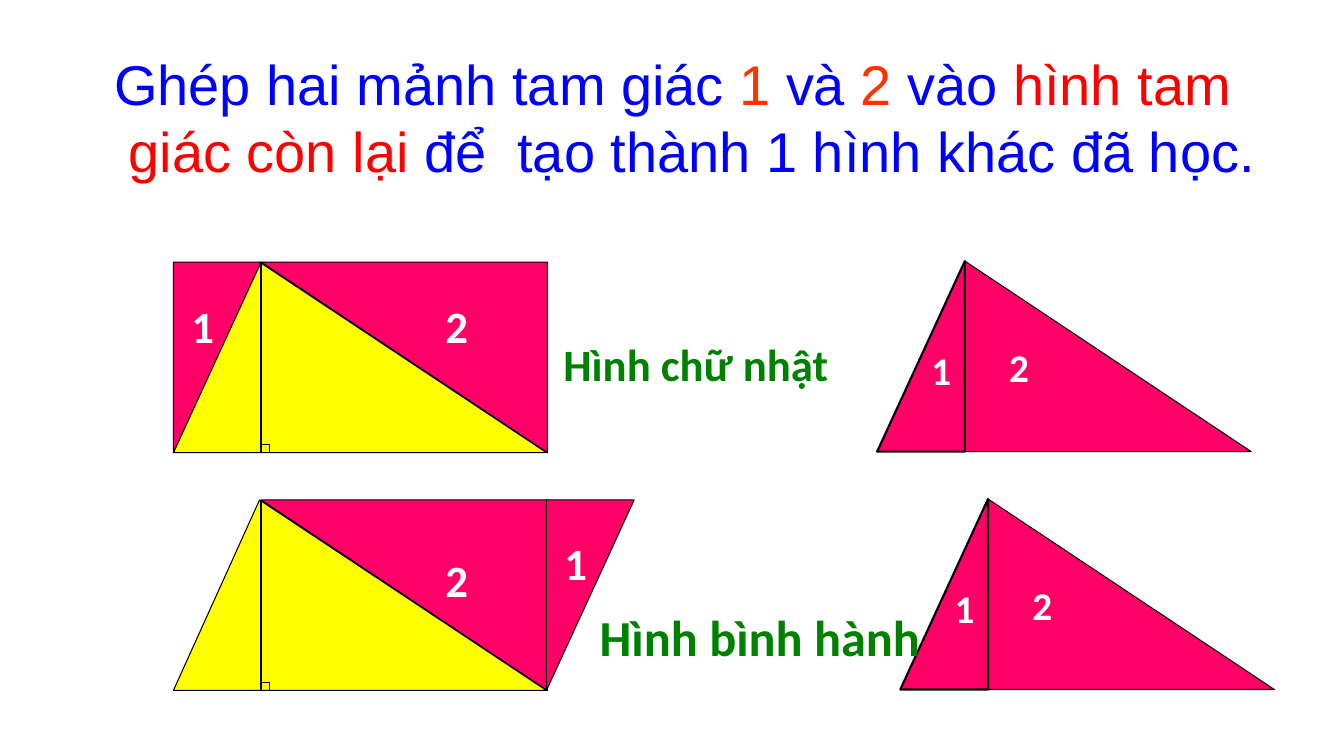
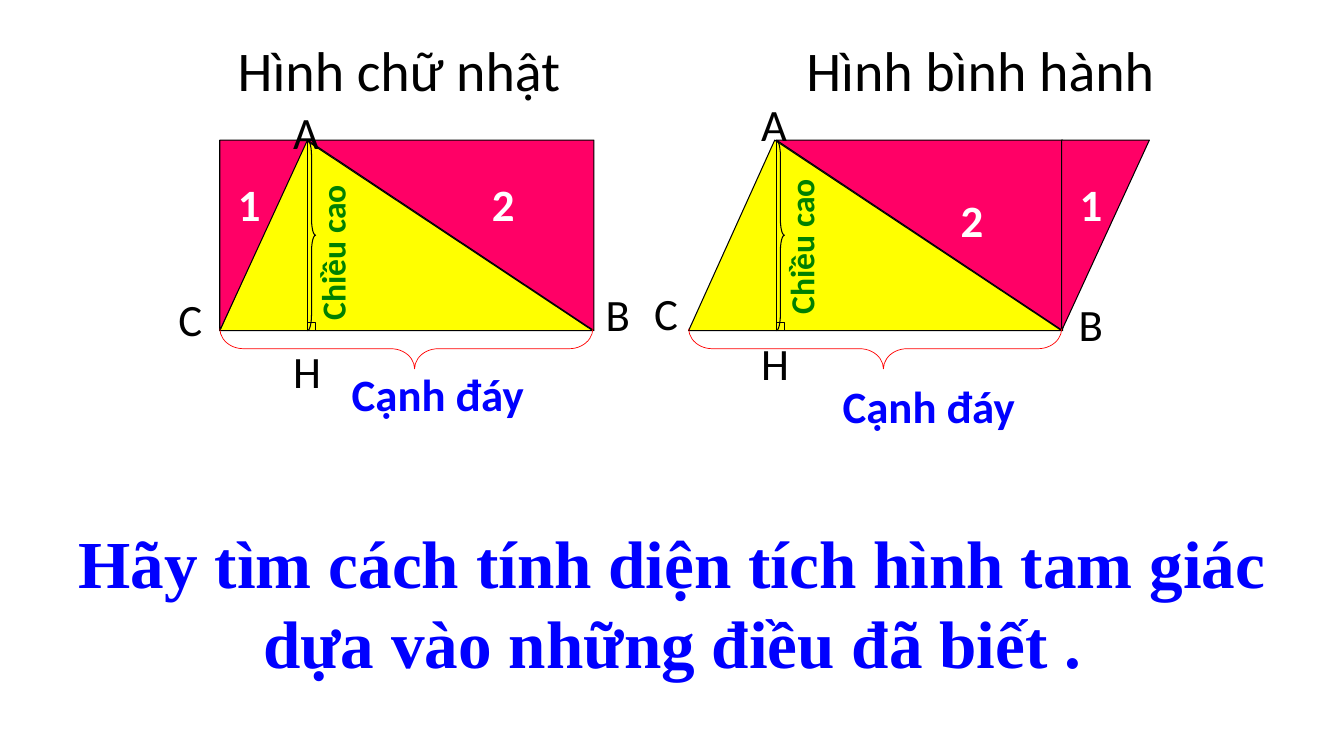
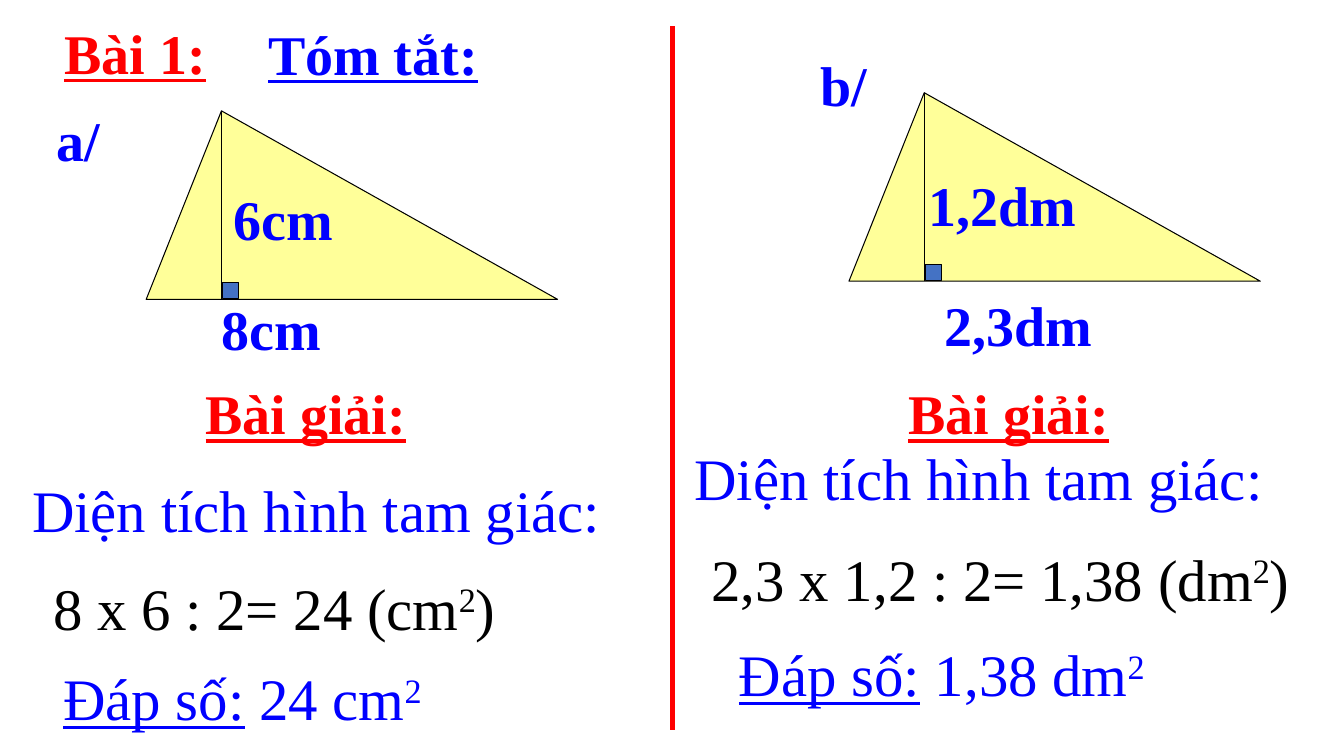
from pptx import Presentation
from pptx.dml.color import RGBColor
from pptx.enum.shapes import MSO_CONNECTOR, MSO_SHAPE
from pptx.enum.text import MSO_AUTO_SIZE, PP_ALIGN
from pptx.oxml.ns import qn
from pptx.util import Inches, Pt
from lxml.etree import SubElement

BLACK, WHITE, BLUE, RED = "000000", "FFFFFF", "0000FF", "FF0000"
PINK, YELLOW, CREAM, GREEN = "FF0066", "FFFF00", "FFFF99", "008000"
ORANGE, STEEL = "FF3300", "4472C4"
SANS, SERIF = "Calibri", "Times New Roman"

# Sizes of the cut triangle: base, height, and the two pieces beside the height
BASE, TALL, LEFT, RIGHT = 3.7, 1.89, 0.87, 2.84


def color(code):
    return RGBColor.from_string(code)


# Basic parts
def shape(slide, kind, box, fill=None, line=BLACK, width=0.75, adj=(), turn=0, flip=False):
    item = slide.shapes.add_shape(kind, *map(Inches, box))
    item.shadow.inherit = False
    if fill:
        item.fill.solid()
        item.fill.fore_color.rgb = color(fill)
    else:
        item.fill.background()
    item.line.color.rgb = color(line)
    item.line.width = Pt(width)
    for i, value in enumerate(adj):
        item.adjustments[i] = value
    item.rotation = turn
    if flip:
        item._element.spPr.find(qn("a:xfrm")).set("flipH", "1")
    return item


def line(slide, x1, y1, x2, y2, ink=BLACK, width=0.75):
    item = slide.shapes.add_connector(MSO_CONNECTOR.STRAIGHT, *map(Inches, (x1, y1, x2, y2)))
    item.line.color.rgb = color(ink)
    item.line.width = Pt(width)
    SubElement(item._element.spPr, qn("a:effectLst"))


def text(slide, box, runs, size, ink, face=SANS, bold=False, under=False,
         align=PP_ALIGN.LEFT, turn=0, hang=0):
    """Runs are a string, or pairs of a string and a style: a colour, "up" or "under"."""
    item = slide.shapes.add_textbox(*map(Inches, box))
    item.rotation = turn
    frame = item.text_frame
    frame.word_wrap = True
    frame.auto_size = MSO_AUTO_SIZE.SHAPE_TO_FIT_TEXT
    para = frame.paragraphs[0]
    para.alignment = align
    font = para.font
    font.name, font.size, font.bold, font.underline = face, Pt(size), bold, under
    font.color.rgb = color(ink)
    if hang:
        props = para._p.get_or_add_pPr()
        props.set("marL", str(Inches(hang)))
        props.set("indent", str(-Inches(hang)))
    for words, style in [(runs, None)] if isinstance(runs, str) else runs:
        run = para.add_run()
        run.text = words
        if style == "up":
            run.font._element.set("baseline", "30000")
        elif style == "under":
            run.font.underline = True
        elif style:
            run.font.color.rgb = color(style)


# Cut triangles
def piece(slide, x, y, wide, **look):
    shape(slide, MSO_SHAPE.RIGHT_TRIANGLE, (x, y, wide, TALL), PINK, **look)


def digit(slide, x, y, mark, size=32):
    text(slide, (x, y, 0.31 if mark == "1" else 0.47, size / 50), mark, size, WHITE, bold=True)


def whole(slide, x, y):
    """The pink triangle, cut along its height."""
    piece(slide, x + LEFT, y, RIGHT)
    piece(slide, x, y, LEFT, width=1.5, flip=True)
    digit(slide, x + 0.44, y + 0.8, "1", 28)
    digit(slide, x + 1.21, y + 0.77, "2", 28)


def joined(slide, x, y, slant, width=0.75):
    """The yellow triangle with both pieces: a rectangle, or a parallelogram if slant."""
    foot = x + LEFT
    side = x + BASE if slant else x
    shape(slide, MSO_SHAPE.ISOSCELES_TRIANGLE, (x, y, BASE, TALL), YELLOW, adj=[0.231])
    line(slide, foot, y, foot, y + TALL, width=width)
    piece(slide, foot, y, RIGHT, turn=180)
    piece(slide, side, y, LEFT, turn=180, flip=True)
    shape(slide, MSO_SHAPE.RECTANGLE, (foot, y + TALL - 0.08, 0.08, 0.08))
    digit(slide, side + 0.08, y + 0.31, "1")
    digit(slide, x + 2.6, y + (0.47 if slant else 0.31), "2")


def named(slide, x, y, slant, title, corners, base, rise):
    """A joined figure with title, corner letters and braces; places count from x, y."""
    def put(place, words, wide, high, *args, **look):
        text(slide, (x + place[0], y + place[1], wide, high), words, *args, **look)

    joined(slide, x, y, slant)
    put((1.07 if slant else 0.08, -1.09), title, 3.94, 0.77, 40, BLACK)
    for letter, place in corners.items():
        put(place, letter, 0.47, 0.64, 32, BLACK)
    shape(slide, MSO_SHAPE.RIGHT_BRACE, (x + LEFT, y, 0.08, TALL), adj=[1.973, 0.499])
    shape(slide, MSO_SHAPE.RIGHT_BRACE, (x + 1.65, y + 0.22, 0.4, BASE),
          line=RED, width=0.5, adj=[0.588, 0.478], turn=90)
    put(base, "Cạnh đáy", 2.1, 0.64, 32, BLUE, bold=True)
    put((0.29, rise), "Chiều cao", 1.65, 0.5, 24, GREEN, bold=True, turn=270)


# Worked exercise
def sketch(slide, x, y, name, high, base):
    """Triangle with its measures; each label is its words and its place from x, y."""
    foot = x + 0.75
    shape(slide, MSO_SHAPE.ISOSCELES_TRIANGLE, (x, y, 4.08, 1.87), CREAM, adj=[0.183])
    line(slide, foot, y, foot, y + 1.87)
    shape(slide, MSO_SHAPE.RECTANGLE, (foot + 0.01, y + 1.7, 0.16, 0.16), STEEL)
    for words, dx, dy in (name, high, base):
        text(slide, (x + dx, y + dy, 1.97, 0.77), words, 40, BLUE, SERIF, bold=True)
    text(slide, (x + 0.49, 3.71, 2.36, 0.77), "Bài giải:", 40, RED, SERIF, True, True)


def solve(slide, x, y, sum_at, end_at, total, answer, unit):
    rows = [
        ((0, 0), "Diện tích hình tam giác:", BLUE),
        (sum_at, [(f"{total} = {answer} ({unit}".replace(" =", "="), None),
                  ("2", "up"), (")", None)], BLACK),
        (end_at, [("Đáp số:", "under"), (f" {answer} {unit}", None), ("2", "up")], BLUE),
    ]
    for (dx, dy), runs, ink in rows:
        text(slide, (x + dx, y + dy, 6.3, 0.81), runs, 42, ink, SERIF)


# Slides
def puzzle(slide):
    text(slide, (0.71, 0.44, 11.92, 1.34), [
        ("Ghép hai mảnh tam giác ", None), ("1 ", ORANGE), ("và ", None), ("2 ", ORANGE),
        ("vào ", None), ("hình tam giác còn lại ", RED),
        ("để  tạo thành 1 hình khác đã học.", None),
    ], 40, BLUE, "Arial", align=PP_ALIGN.CENTER, hang=0.38)
    joined(slide, 1.72, 2.6, False, 1.5)
    joined(slide, 1.72, 4.96, True, 1.5)
    whole(slide, 8.7, 2.59)
    whole(slide, 8.93, 4.95)
    text(slide, (5.49, 3.29, 3.1, 0.64), "Hình chữ nhật", 32, GREEN, bold=True)
    text(slide, (5.85, 5.96, 3.47, 0.71), "Hình bình hành", 36, GREEN, bold=True)


def compare(slide):
    named(slide, 2.18, 1.39, False, "Hình chữ nhật",
          {"A": (0.63, -0.4), "B": (3.73, 1.41), "C": (-0.51, 1.45), "H": (0.63, 1.97)},
          (1.21, 2.2), 0.81)
    named(slide, 6.83, 1.39, True, "Hình bình hành",
          {"A": (0.62, -0.48), "B": (3.77, 1.5), "C": (-0.44, 1.4), "H": (0.62, 1.89)},
          (1.43, 2.32), 0.75)
    text(slide, (0.67, 5.12, 12, 1.72),
         "Hãy tìm cách tính diện tích hình tam giác dựa vào những điều đã biết .",
         48, BLUE, SERIF, bold=True, align=PP_ALIGN.CENTER)


def lesson(slide):
    text(slide, (0.54, 0.13, 2.35, 0.77), "Bài 1:", 40, RED, SERIF, True, True)
    text(slide, (2.56, 0.14, 3.62, 0.77), "Tóm tắt:", 40, BLUE, SERIF, True, True)
    line(slide, 6.67, 0.26, 6.67, 7.24, RED, 3)
    sketch(slide, 1.45, 1.1, ("a/", -0.99, -0.1), ("6cm", 0.77, 0.68), ("8cm", 0.65, 1.77))
    solve(slide, 0.22, 4.65, (0.21, 0.97), (0.31, 1.87), "8 x 6 : 2", "24", "cm")
    sketch(slide, 8.42, 0.92, ("b/", -0.38, -0.47), ("1,2dm", 0.69, 0.72),
           ("2,3dm", 0.85, 1.91))
    solve(slide, 6.79, 4.33, (0.17, 1), (0.44, 1.95), "2,3 x 1,2 : 2", "1,38", "dm")


def main():
    deck = Presentation()
    deck.slide_width, deck.slide_height = Inches(13.33), Inches(7.5)
    for draw in (puzzle, compare, lesson):
        draw(deck.slides.add_slide(deck.slide_layouts[6]))
    deck.save("out.pptx")


if __name__ == "__main__":
    main()
